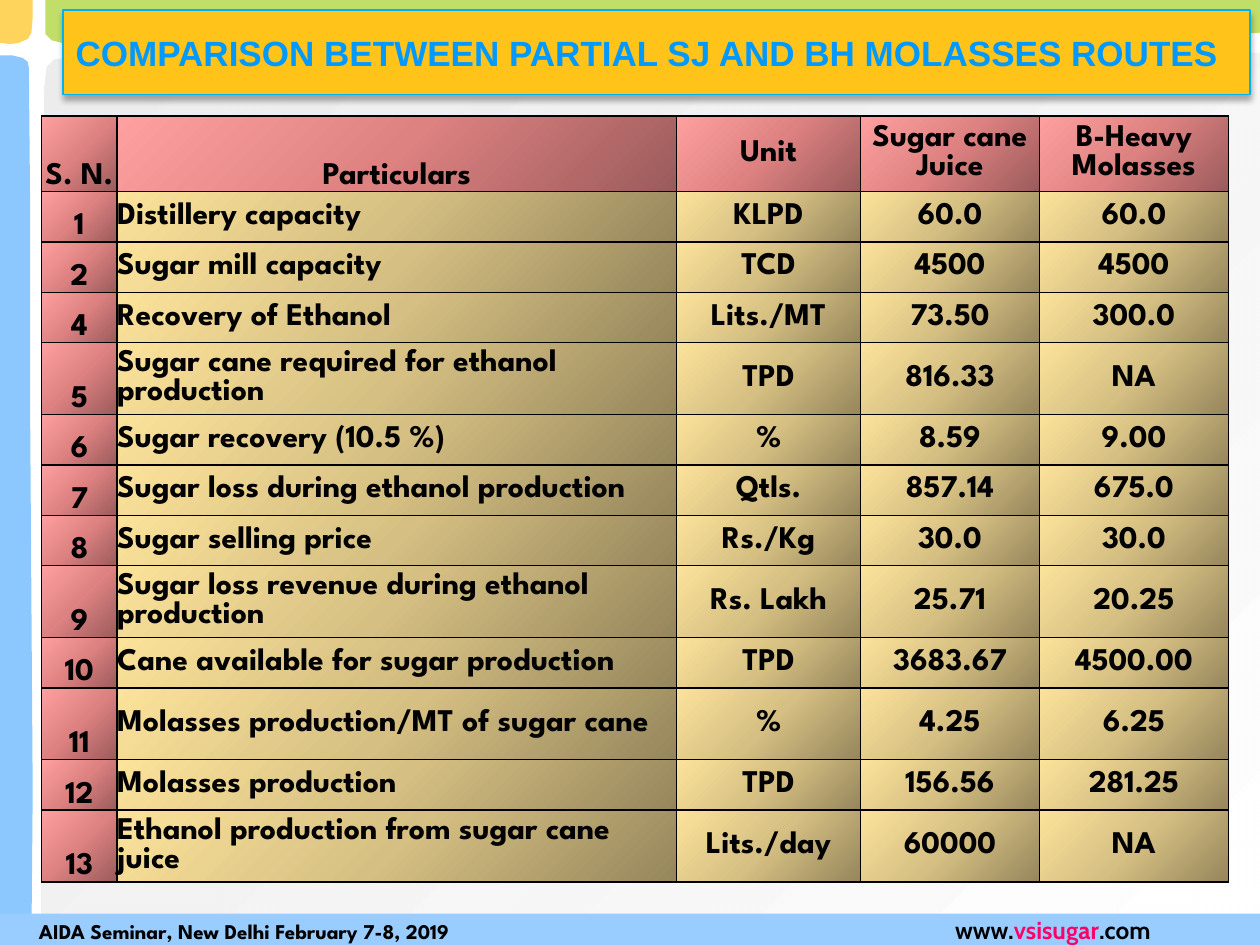
from lxml import etree
from pptx import Presentation
from pptx.dml.color import RGBColor
from pptx.enum.shapes import MSO_SHAPE
from pptx.enum.text import MSO_ANCHOR, PP_ALIGN
from pptx.oxml.ns import qn
from pptx.util import Pt

PX = 9144  # 100 px to the inch
RECT = MSO_SHAPE.RECTANGLE
MIDDLE, BOTTOM = MSO_ANCHOR.MIDDLE, MSO_ANCHOR.BOTTOM
LEFT, CENTER = PP_ALIGN.LEFT, PP_ALIGN.CENTER
HEX = {
    "black": "000000", "grey": "E6E6E6", "white": "FFFFFF",
    "green": "A8D02A", "blue": "5CB1FE", "gold": "FFC319",
    "foot": "99CCFF", "pink": "FF0066", "title": "0099FF", "edge": "00B0F0",
}
ROSE = [(0, "9B5B5B", 100), (50, "DD8181", 100), (100, "FFA0A0", 100)]
SAND = [(0, "96865C", 100), (50, "D5BF82", 100), (100, "FCE39B", 100)]
HAZE = [(0, HEX["grey"], 70), (100, HEX["white"], 100)]


def node(parent, tag, **attrs):
    """Append a DrawingML child with the given attributes."""
    items = {key: str(val) for key, val in attrs.items()}
    return etree.SubElement(parent, qn("a:" + tag), items)


def shade(parent, stops, angle):
    """Append a linear gradient, its angle in degrees clockwise."""
    grad = node(parent, "gradFill", rotWithShape=1)
    bar = node(grad, "gsLst")
    for pos, color, alpha in stops:
        tint = node(node(bar, "gs", pos=pos * 1000), "srgbClr", val=color)
        if alpha < 100:
            node(tint, "alpha", val=alpha * 1000)
    node(grad, "lin", ang=angle * 60000, scaled=0)


deck = Presentation()
deck.slide_width, deck.slide_height = 1000 * PX, 750 * PX
slide = deck.slides.add_slide(deck.slide_layouts[5])
shapes = slide.shapes

# Backdrop panels
panels = [
    ("grey", [(1000, 750), (1000, 42), (880, 40), (760, 42), (433, 42),
              (150, 42), (57, 45), (43, 47), (37, 53), (35, 73), (35, 182),
              (34, 506), (33, 620), (33, 750)]),
    ("green", [(1000, 0), (1000, 26), (930, 30), (832, 32), (426, 31),
               (203, 31), (49, 34), (41, 32), (36, 27), (36, 0)]),
    ("blue", [(0, 750), (25, 750), (26, 628), (24, 330), (24, 167), (23, 54),
              (22, 49), (18, 46), (10, 44), (0, 44)]),
    ("gold", [(0, 0), (26, 0), (26, 14), (25, 26), (22, 31), (15, 34),
              (8, 35), (0, 34)]),
]
for name, spots in panels:
    path = shapes.build_freeform(*spots[0], scale=PX)
    path.add_line_segments(spots[1:], close=True)
    panel = path.convert_to_shape()
    panel.shadow.inherit = False
    panel.line.fill.background()
    if name == "grey":
        props = panel._element.spPr
        shade(props, HAZE, 45)
        props.find(qn("a:custGeom")).addnext(props[-1])
    else:
        panel.fill.solid()
        panel.fill.fore_color.rgb = RGBColor.from_string(HEX[name])
        tint = panel._element.spPr.find(".//" + qn("a:srgbClr"))
        node(tint, "alpha", val=70000)

# Footer
foot = shapes.add_shape(RECT, 0, 725 * PX, 1000 * PX, 25 * PX)
foot.shadow.inherit = False
foot.fill.solid()
foot.fill.fore_color.rgb = RGBColor.from_string(HEX["foot"])
foot.line.fill.background()
frame = foot.text_frame
frame.word_wrap = True
frame.vertical_anchor = MIDDLE
frame.margin_left, frame.margin_right = 31 * PX, 0
para = frame.paragraphs[0]
para.alignment = LEFT
tabs = node(para._p.get_or_add_pPr(), "tabLst")
node(tabs, "tab", pos=727 * PX, algn="l")
para.font.bold = True
for text, font, size, color in [
    ("AIDA Seminar, New Delhi February 7-8, 2019\t", "League Spartan", 12, "black"),
    ("www.", "Cabin", 14, "black"),
    ("vsisugar", "Cabin", 14, "pink"),
    (".com", "Cabin", 14, "black"),
]:
    run = para.add_run()
    run.text = text
    run.font.name, run.font.size = font, Pt(size)
    run.font.color.rgb = RGBColor.from_string(HEX[color])

# Title, raised above the backdrop
title = shapes.title
shapes._spTree.append(title._element)
title.left, title.top, title.width, title.height = [
    n * PX for n in (50, 8, 942, 67)]
title.fill.solid()
title.fill.fore_color.rgb = RGBColor.from_string(HEX["gold"])
title.line.color.rgb = RGBColor.from_string(HEX["edge"])
title.line.width = Pt(0.75)
glow = node(node(title._element.spPr, "effectLst"), "outerShdw",
            blurRad=Pt(3.5), dist=Pt(2.2), dir=90 * 60000, rotWithShape=0)
node(node(glow, "srgbClr", val=HEX["black"]), "alpha", val=32000)
frame = title.text_frame
frame.text = "COMPARISON BETWEEN PARTIAL SJ AND BH MOLASSES ROUTES"
frame.word_wrap = True
frame.vertical_anchor = MIDDLE
para = frame.paragraphs[0]
para.alignment = LEFT
para.font.name, para.font.size, para.font.bold = "Arial", Pt(20), True
para.font.color.rgb = RGBColor.from_string(HEX["title"])

# Comparison table
rows = [
    ("S. N.", "Particulars", "Unit", "Sugar cane Juice", "B-Heavy Molasses"),
    ("1", "Distillery capacity", "KLPD", "60.0", "60.0"),
    ("2", "Sugar mill capacity", "TCD", "4500", "4500"),
    ("4", "Recovery of Ethanol", "Lits./MT", "73.50", "300.0"),
    ("5", "Sugar cane required for ethanol production", "TPD", "816.33", "NA"),
    ("6", "Sugar recovery (10.5 %)", "%", "8.59", "9.00"),
    ("7", "Sugar loss during ethanol production", "Qtls.", "857.14", "675.0"),
    ("8", "Sugar selling price", "Rs./Kg", "30.0", "30.0"),
    ("9", "Sugar loss revenue during ethanol production", "Rs. Lakh", "25.71", "20.25"),
    ("10", "Cane available for sugar production", "TPD", "3683.67", "4500.00"),
    ("11", "Molasses production/MT of sugar cane", "%", "4.25", "6.25"),
    ("12", "Molasses production", "TPD", "156.56", "281.25"),
    ("13", "Ethanol production from sugar cane juice", "Lits./day", "60000", "NA"),
]
wide = [60, 444, 146, 142, 150]
high = [60, 40, 40, 40, 57, 40, 40, 40, 57, 40, 57, 40, 57]
table = shapes.add_table(len(rows), len(wide), 33 * PX, 92 * PX,
                         sum(wide) * PX, sum(high) * PX).table
for col, size in zip(table.columns, wide):
    col.width = size * PX
for row, size in zip(table.rows, high):
    row.height = size * PX

for r, row in enumerate(rows):
    for c, text in enumerate(row):
        cell = table.cell(r, c)
        cell.text = text
        cell.margin_left = cell.margin_right = 0
        cell.margin_top = cell.margin_bottom = 0
        low = c == 0 or (r == 0 and c == 1)
        cell.vertical_anchor = BOTTOM if low else MIDDLE
        para = cell.text_frame.paragraphs[0]
        para.alignment = LEFT if r and c == 1 else CENTER
        para.font.name, para.font.size = "League Spartan", Pt(18)
        para.font.bold = True
        para.font.color.rgb = RGBColor.from_string(HEX["black"])
        props = cell._tc.get_or_add_tcPr()
        for side in ("lnL", "lnR", "lnT", "lnB"):
            edge = node(props, side, w=Pt(1))
            node(node(edge, "solidFill"), "srgbClr", val=HEX["black"])
        shade(props, SAND if r and c else ROSE, 225)

deck.save("out.pptx")
